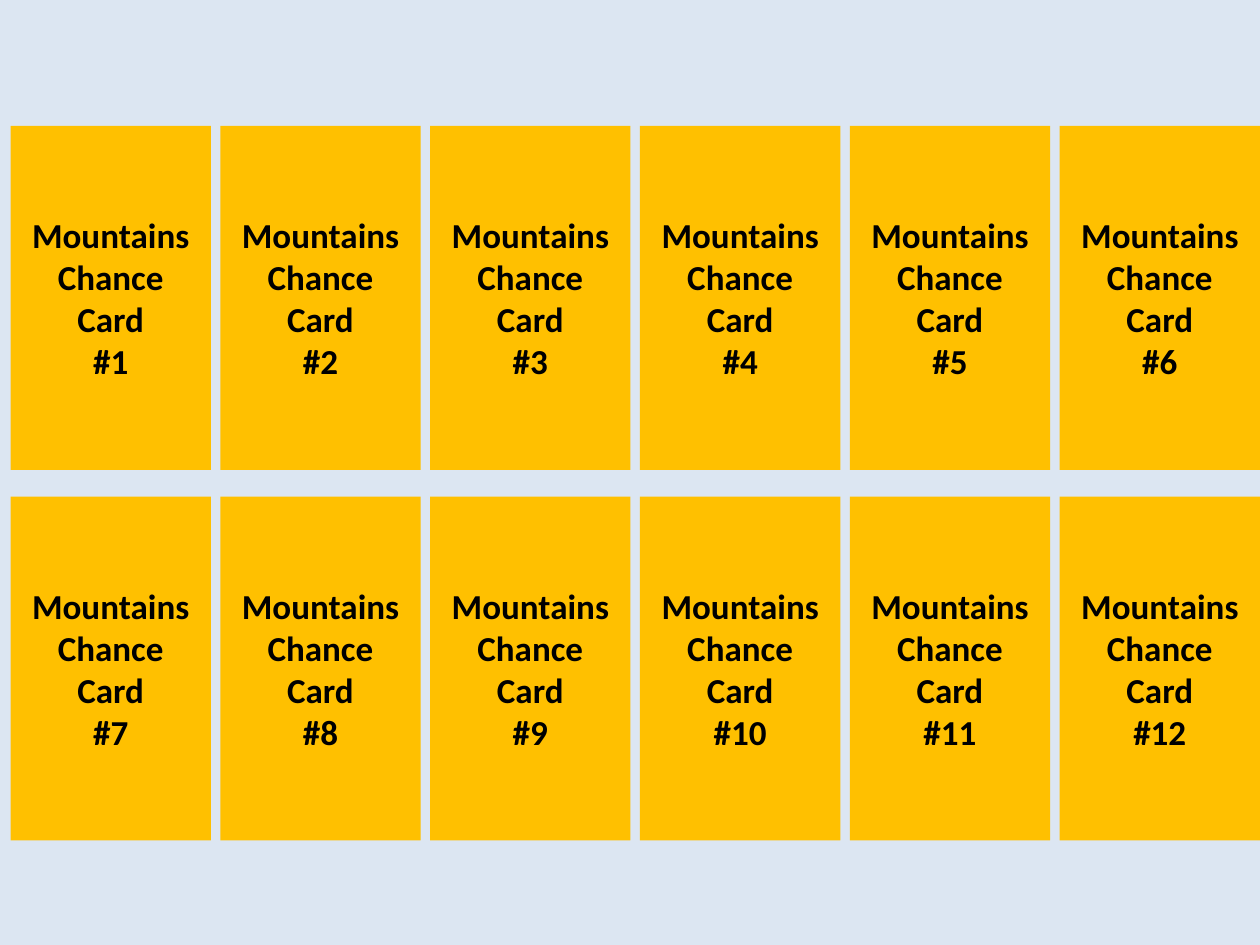
from pptx import Presentation
from pptx.dml.color import RGBColor
from pptx.enum.shapes import MSO_SHAPE as Shape
from pptx.enum.text import MSO_ANCHOR as Anchor, PP_ALIGN as Align
from pptx.util import Pt


def paint(fill, color):
    fill.solid()
    fill.fore_color.rgb = RGBColor.from_string(color)


deck = Presentation()
deck.slide_width, deck.slide_height = Pt(720), Pt(540)
slide = deck.slides.add_slide(deck.slide_layouts[6])
paint(slide.background.fill, "DCE6F2")

COLS, COUNT = 6, 12
LEFT, TOP = 6, 72
WIDTH, HEIGHT = 114.5, 196.5
STEP_X, STEP_Y = 119.9, 211.8

for i in range(COUNT):
    row, col = divmod(i, COLS)
    card = slide.shapes.add_shape(
        Shape.RECTANGLE,
        Pt(LEFT + col * STEP_X), Pt(TOP + row * STEP_Y),
        Pt(WIDTH), Pt(HEIGHT))
    card.shadow.inherit = False
    paint(card.fill, "FFC000")
    card.line.fill.background()

    frame = card.text_frame
    frame.word_wrap = True
    frame.vertical_anchor = Anchor.MIDDLE
    frame.text = f"Mountains Chance Card\n#{i + 1}"
    for para in frame.paragraphs:
        para.alignment = Align.CENTER
        font = para.runs[0].font
        font.name, font.size, font.bold = "Calibri", Pt(20), True
        paint(font.fill, "000000")

deck.save("out.pptx")
